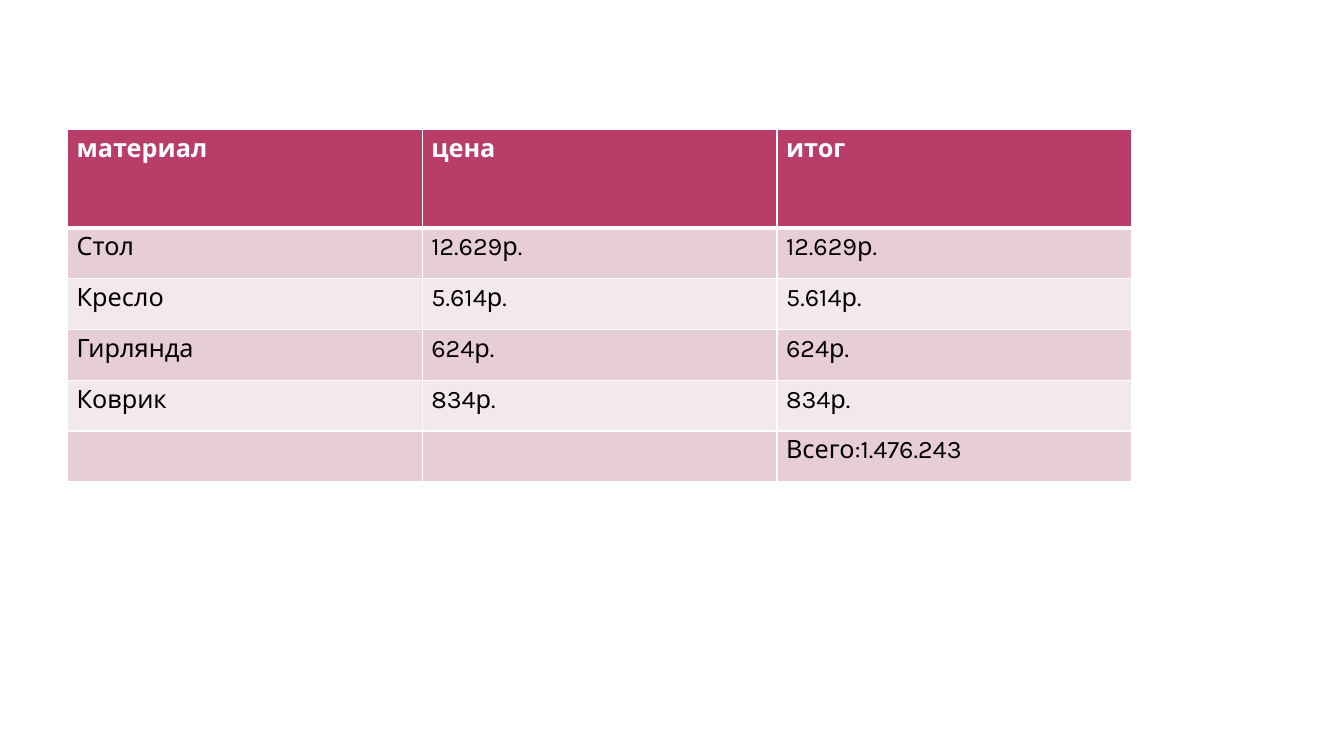
"""Build a slide with a price table of room furnishings."""
from lxml import etree
from pptx import Presentation
from pptx.dml.color import RGBColor
from pptx.oxml.ns import qn
from pptx.util import Cm, Pt

HEADINGS = ("материал", "цена", "итог")
PURCHASES = [
    ("Стол", "12.629р.", "12.629р."),
    ("Кресло", "5.614р.", "5.614р."),
    ("Гирлянда", "624р.", "624р."),
    ("Коврик", "834р.", "834р."),
    ("", "", "Всего:1.476.243"),
]
COLORS = {
    "heading": "B83D68",
    "odd": "E6CED4",
    "even": "F3E8EB",
    "light": "FFFFFF",
    "dark": "000000",
}
FONT = "Karla"
LEFT, TOP = 1.7, 3.26
COLUMN_WIDTH = 8.94
HEADING_HEIGHT, PURCHASE_HEIGHT = 2.48, 1.28
THIN, THICK = 1, 3


def write(cell, text, *, color, size=18, bold=False):
    cell.margin_left = cell.margin_right = Cm(0.23)
    cell.margin_top = cell.margin_bottom = Cm(0.12)
    paragraph = cell.text_frame.paragraphs[0]
    paragraph.font.size = Pt(size)
    if text:
        run = paragraph.add_run()
        run.text = text
        run.font.name = FONT
        run.font.size = Pt(size)
        run.font.bold = bold
        run.font.color.rgb = RGBColor.from_string(COLORS[color])


def draw_borders(cell, top, bottom):
    properties = cell._tc.get_or_add_tcPr()
    widths = {"lnL": THIN, "lnR": THIN, "lnT": top, "lnB": bottom}
    for position, (side, width) in enumerate(widths.items()):
        line = etree.Element(qn(f"a:{side}"), w=str(Pt(width)))
        fill = etree.SubElement(line, qn("a:solidFill"))
        etree.SubElement(fill, qn("a:srgbClr"), val=COLORS["light"])
        properties.insert(position, line)


def main():
    deck = Presentation()
    deck.slide_width, deck.slide_height = Cm(33.87), Cm(19.05)
    slide = deck.slides.add_slide(deck.slide_layouts[6])

    rows = [HEADINGS, *PURCHASES]
    heights = [HEADING_HEIGHT] + [PURCHASE_HEIGHT] * len(PURCHASES)
    prices = slide.shapes.add_table(
        len(rows), len(HEADINGS), Cm(LEFT), Cm(TOP),
        Cm(COLUMN_WIDTH * len(HEADINGS)), Cm(sum(heights)),
    ).table
    for column in prices.columns:
        column.width = Cm(COLUMN_WIDTH)

    for r, (entries, height) in enumerate(zip(rows, heights)):
        prices.rows[r].height = Cm(height)
        heading = r == 0
        band = "heading" if heading else "odd" if r % 2 else "even"
        for c, entry in enumerate(entries):
            cell = prices.cell(r, c)
            write(cell, entry, color="light" if heading else "dark", bold=heading)
            cell.fill.solid()
            cell.fill.fore_color.rgb = RGBColor.from_string(COLORS[band])
            draw_borders(cell, top=THICK if r == 1 else THIN,
                         bottom=THICK if heading else THIN)

    deck.save("out.pptx")


if __name__ == "__main__":
    main()
